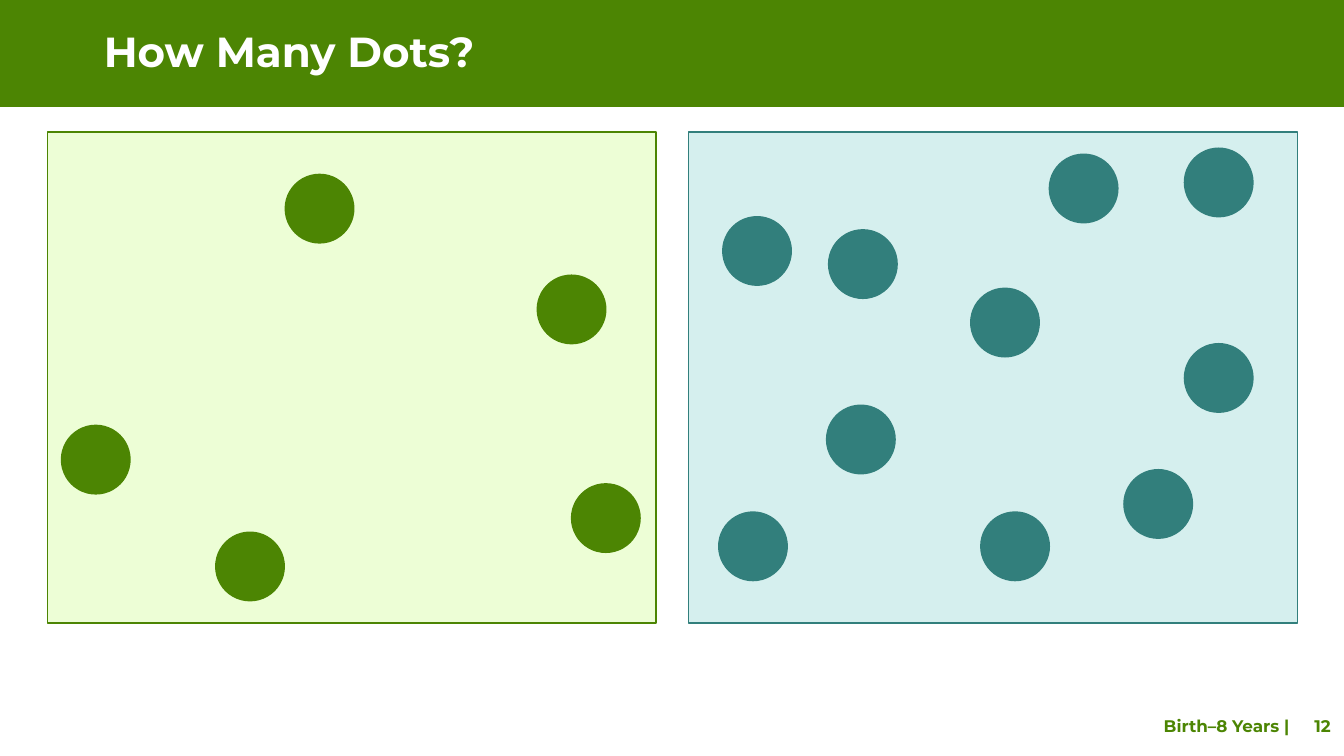
from dataclasses import dataclass

from pptx import Presentation
from pptx.dml.color import RGBColor
from pptx.enum.shapes import MSO_SHAPE
from pptx.enum.text import MSO_ANCHOR, PP_ALIGN
from pptx.util import Inches, Pt

RECTANGLE, OVAL = MSO_SHAPE.RECTANGLE, MSO_SHAPE.OVAL
LEFT, RIGHT = PP_ALIGN.LEFT, PP_ALIGN.RIGHT
MIDDLE = MSO_ANCHOR.MIDDLE
TITLE_ONLY = 5


@dataclass(frozen=True)
class Theme:
    font: str = "Montserrat"
    green: str = "4C8503"
    pale_green: str = "EDFED6"
    teal: str = "327F7C"
    pale_teal: str = "D5EFEE"
    white: str = "FFFFFF"
    title_size: int = 30
    footer_size: int = 12
    line_width: int = 1


THEME = Theme()

# Grid of tenth-inch cells
SLIDE_COLUMNS, SLIDE_ROWS = 133.33, 75
BAND_ROWS = 10.6
PANEL_LEFT, PANEL_TOP = 4.7, 13.1
PANEL_COLUMNS, PANEL_ROWS, PANEL_GAP = 60.4, 48.7, 3.2
DOT_CELLS = 6.8

# Column and row of each dot, counted from its panel's corner
GREEN_DOTS = [(1.4, 29.1), (16.7, 39.7), (48.6, 14.2), (52, 34.9), (23.6, 4.2)]
TEAL_DOTS = [(13.7, 27.1), (29, 37.7), (3.4, 8.4), (3, 37.7), (35.8, 2.2),
             (49.2, 1.6), (28, 15.5), (49.2, 21), (43.2, 33.5), (13.9, 9.7)]


def cells(*counts):
    """Turn counts of grid cells into lengths."""
    return [Inches(count / 10) for count in counts]


def add_filled(shapes, kind, place, fill, line=None):
    shape = shapes.add_shape(kind, *cells(*place))
    shape.shadow.inherit = False
    shape.fill.solid()
    shape.fill.fore_color.rgb = RGBColor.from_string(fill)
    if line:
        shape.line.color.rgb = RGBColor.from_string(line)
        shape.line.width = Pt(THEME.line_width)
    else:
        shape.line.fill.background()
    return shape


def write(box, text, *, size, color, align=LEFT, spacing=1.0):
    frame = box.text_frame
    frame.word_wrap = True
    frame.vertical_anchor = MIDDLE
    para = frame.paragraphs[0]
    para.alignment = align
    para.line_spacing = spacing
    span = para.add_run()
    span.text = text
    span.font.name = THEME.font
    span.font.size = Pt(size)
    span.font.bold = True
    span.font.color.rgb = RGBColor.from_string(color)


def add_title(slide, text):
    """Fill the title placeholder and lay the band behind it."""
    title = slide.shapes.title
    title.left, title.top, title.width, title.height = cells(9.3, 2.6, 118.5, 5.6)
    write(title, text, size=THEME.title_size, color=THEME.white, spacing=0.9)
    band = add_filled(slide.shapes, RECTANGLE, (0, 0, SLIDE_COLUMNS, BAND_ROWS), THEME.green)
    title.element.addprevious(band.element)


def add_dot_panel(slide, index, dots, color, background):
    left = PANEL_LEFT + index * (PANEL_COLUMNS + PANEL_GAP)
    group = slide.shapes.add_group_shape()
    place = (left, PANEL_TOP, PANEL_COLUMNS, PANEL_ROWS)
    add_filled(group.shapes, RECTANGLE, place, background, color)
    for column, row in dots:
        place = (left + column, PANEL_TOP + row, DOT_CELLS, DOT_CELLS)
        add_filled(group.shapes, OVAL, place, color, color)


def add_footer(slide, label, number):
    for text, left, width in [(label, 94.9, 34), (number, 126.9, 6.1)]:
        box = slide.shapes.add_textbox(*cells(left, 70, width, 4))
        write(box, text, size=THEME.footer_size, color=THEME.green, align=RIGHT)


def main():
    deck = Presentation()
    deck.slide_width, deck.slide_height = cells(SLIDE_COLUMNS, SLIDE_ROWS)
    slide = deck.slides.add_slide(deck.slide_layouts[TITLE_ONLY])
    add_title(slide, "How Many Dots?")
    add_dot_panel(slide, 0, GREEN_DOTS, THEME.green, THEME.pale_green)
    add_dot_panel(slide, 1, TEAL_DOTS, THEME.teal, THEME.pale_teal)
    add_footer(slide, "Birth–8 Years |", "12")
    deck.save("out.pptx")


if __name__ == "__main__":
    main()
